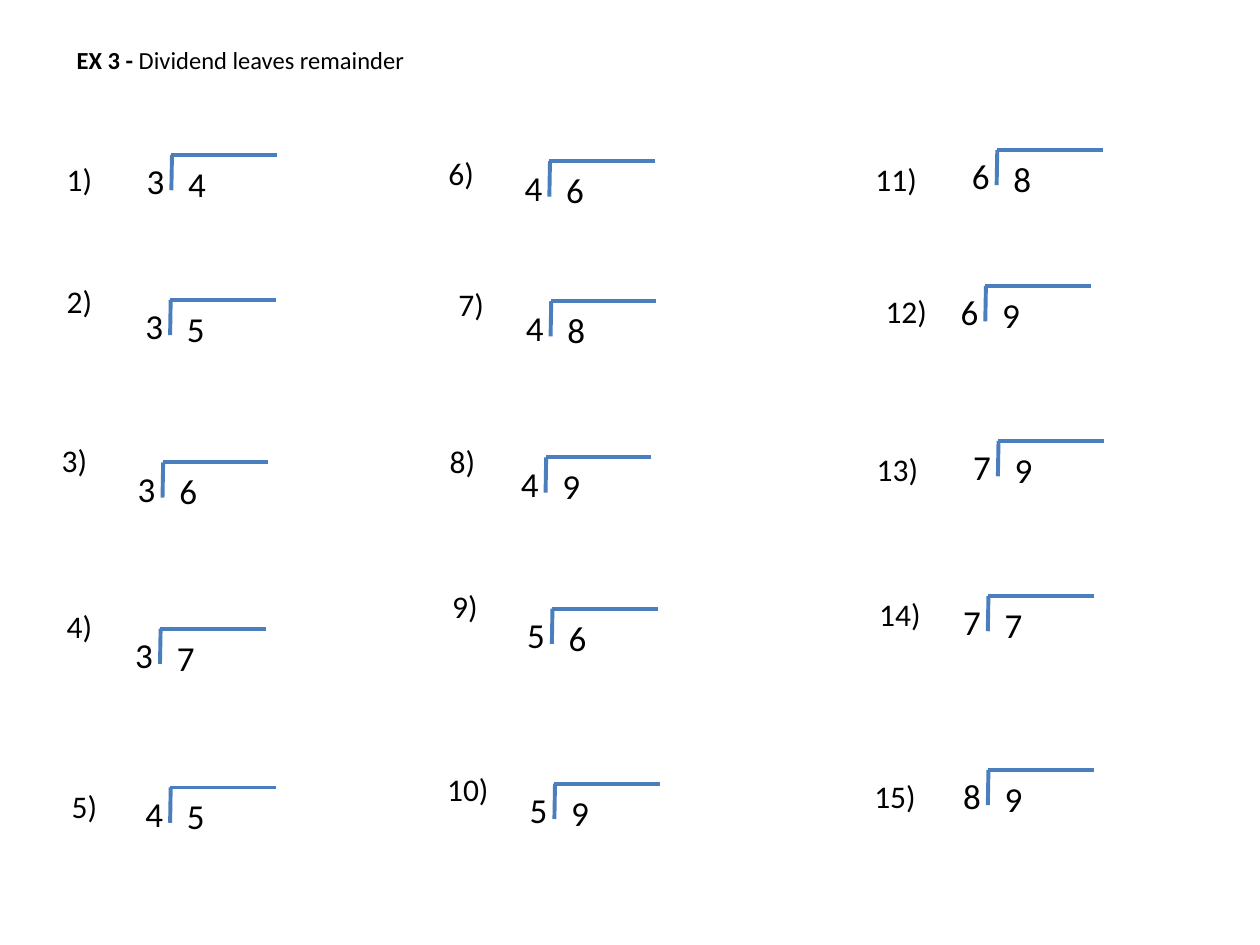
from dataclasses import dataclass

from lxml import etree
from pptx import Presentation
from pptx.dml.color import RGBColor
from pptx.enum.shapes import MSO_CONNECTOR
from pptx.enum.text import MSO_AUTO_SIZE
from pptx.oxml.ns import qn
from pptx.util import Inches, Pt

STRAIGHT = MSO_CONNECTOR.STRAIGHT
FIT_SHAPE = MSO_AUTO_SIZE.SHAPE_TO_FIT_TEXT
COLUMNS, ROWS = 100, 75


def color(hex_string):
    return RGBColor.from_string(hex_string)


@dataclass
class Problem:
    divisor: int
    dividend: int
    label_column: float
    label_row: float
    corner_column: float
    corner_row: float
    label_width: float
    dividend_width: float = 3.4


class Worksheet:
    font = "Calibri"
    ink = "000000"
    bracket_color = "4B7EBC"
    bracket_weight = 2.25
    title_size = 14
    label_size = 18
    digit_size = 20
    bracket_width = 8.4
    bracket_height = 2.8
    bracket_lean = 0.05

    def __init__(self, presentation):
        self.presentation = presentation
        self.slide = presentation.slides.add_slide(presentation.slide_layouts[6])

    def x(self, columns):
        return round(self.presentation.slide_width * columns / COLUMNS)

    def y(self, rows):
        return round(self.presentation.slide_height * rows / ROWS)

    def text(self, shapes, parts, column, row, width, height, size, wrap=False):
        box = shapes.add_textbox(self.x(column), self.y(row), self.x(width), self.y(height))
        frame = box.text_frame
        frame.word_wrap = wrap
        frame.auto_size = FIT_SHAPE
        paragraph = frame.paragraphs[0]
        for words, bold in parts:
            run = paragraph.add_run()
            run.text = words
            run.font.name = self.font
            run.font.size = Pt(size)
            run.font.bold = bold
            run.font.color.rgb = color(self.ink)

    def line(self, shapes, start, end):
        connector = shapes.add_connector(
            STRAIGHT, self.x(start[0]), self.y(start[1]), self.x(end[0]), self.y(end[1])
        )
        connector.line.color.rgb = color(self.bracket_color)
        connector.line.width = Pt(self.bracket_weight)
        etree.SubElement(connector._element.spPr, qn("a:effectLst"))

    def title(self, parts):
        self.text(self.slide.shapes, parts, 5.1, 3.1, 28.4, 3.4, self.title_size)

    def label(self, number, problem):
        self.text(self.slide.shapes, [(f"{number})", False)], problem.label_column,
                  problem.label_row, problem.label_width, 4, self.label_size, wrap=True)

    def division(self, problem):
        shapes = self.slide.shapes.add_group_shape().shapes
        column, row = problem.corner_column, problem.corner_row
        self.line(shapes, (column, row + self.bracket_height), (column + self.bracket_lean, row))
        self.line(shapes, (column + self.bracket_width, row), (column, row))
        self.text(shapes, [(str(problem.dividend), False)], column + 0.35, row + 0.1,
                  problem.dividend_width, 4.4, self.digit_size, wrap=problem.dividend_width > 3.4)
        self.text(shapes, [(str(problem.divisor), False)], column - 2.95, row - 0.1,
                  3.4, 4.4, self.digit_size)


PROBLEMS = [
    Problem(3, 4, 4.3, 12.2, 13.6, 12.3, 4.2, 9.4),
    Problem(3, 5, 4.3, 21.9, 13.5, 23.8, 4.2, 10),
    Problem(3, 6, 3.9, 34.5, 12.9, 36.7, 4.2),
    Problem(3, 7, 4.3, 47.7, 12.7, 49.9, 4.2),
    Problem(4, 5, 4.7, 62, 13.5, 62.5, 4.2),
    Problem(4, 6, 34.6, 11.7, 43.6, 12.8, 4.2),
    Problem(4, 8, 35.4, 22.1, 43.7, 23.9, 4.2),
    Problem(4, 9, 34.7, 34.6, 43.3, 36.3, 4.2),
    Problem(5, 6, 34.9, 46.1, 43.8, 48.3, 4.2),
    Problem(5, 9, 34.5, 60.6, 44, 62.2, 6.1),
    Problem(6, 8, 68.5, 12.2, 79.1, 11.9, 5.6),
    Problem(6, 9, 69.3, 22.7, 78.2, 22.7, 5.6),
    Problem(7, 9, 68.6, 35.2, 79.2, 35, 5.6),
    Problem(7, 7, 68.8, 46.7, 78.4, 47.3, 5.6),
    Problem(8, 9, 68.4, 61.2, 78.4, 61.1, 8.1),
]


def main():
    presentation = Presentation()
    presentation.slide_width = Inches(10)
    presentation.slide_height = Inches(7.5)
    worksheet = Worksheet(presentation)
    worksheet.title([("EX 3 - ", True), ("Dividend leaves remainder", False)])
    for number, problem in enumerate(PROBLEMS, start=1):
        worksheet.label(number, problem)
        worksheet.division(problem)
    presentation.save("out.pptx")


if __name__ == "__main__":
    main()
